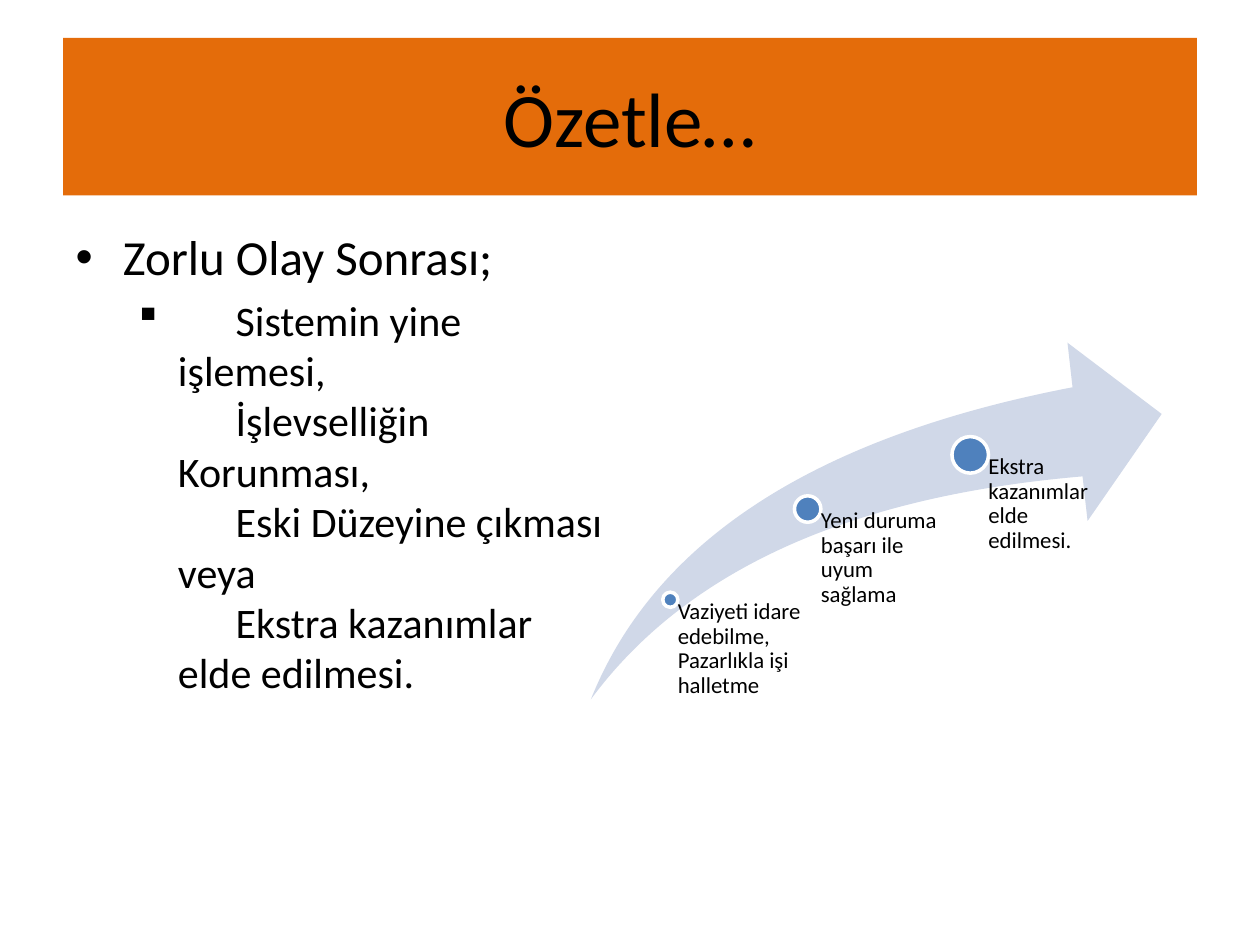
from pptx import Presentation, util as u
from pptx.dml.color import RGBColor
from pptx.enum import shapes, text
from pptx.oxml import parse_xml
from pptx.oxml.ns import nsdecls

HUES = {"band": "E46C0A", "ink": "000000", "swoosh": "D0D8E8",
        "dot": "4F81BD", "rim": "FFFFFF"}
KINDS = shapes.MSO_SHAPE


class Deck:
    """Style and current slide; one grid unit is a tenth of an inch."""

    def __init__(self, wide=100, high=75):
        self.prs = Presentation()
        self.prs.slide_width = self.unit(wide)
        self.prs.slide_height = self.unit(high)
        self.slide = self.prs.slides.add_slide(self.prs.slide_layouts[1])

    def unit(self, n):
        return u.Inches(n / 10)

    def paint(self, fill, hue):
        fill.solid()
        fill.fore_color.rgb = RGBColor.from_string(HUES[hue])

    def place(self, item, *box):
        item.left, item.top, item.width, item.height = map(self.unit, box)

    def label(self, para, words, size):
        para.text = words
        para.font.name = "Calibri"
        para.font.size = u.Pt(size)
        para.font.color.rgb = RGBColor.from_string(HUES["ink"])

    def title(self, words, *box):
        head = self.slide.shapes.title
        self.place(head, *box)
        self.paint(head.fill, "band")
        self.label(head.text_frame.paragraphs[0], words, 44)

    def body(self, lead, lines, *box):
        hold = self.slide.placeholders[1]
        self.place(hold, *box)
        frame = hold.text_frame
        self.label(frame.paragraphs[0], lead, 28)
        para = frame.add_paragraph()
        para.level = 1
        # Square bullet, and a tab stop that sets in each line's start
        props = para._p.get_or_add_pPr()
        for tag in ('<a:buFont {} typeface="Wingdings"/>',
                    '<a:buChar {} char="§"/>',
                    f'<a:tabLst {{}}><a:tab pos="{u.Inches(1.27)}" algn="l"/></a:tabLst>'):
            props.append(parse_xml(tag.format(nsdecls("a"))))
        self.label(para, "\v".join("\t" + line for line in lines), 24)

    def shape(self, kind, hue, *box):
        item = self.slide.shapes.add_shape(kind, *map(self.unit, box))
        item.shadow.inherit = False
        self.paint(item.fill, hue)
        item.line.fill.background()
        return item

    def swoosh(self, *box):
        item = self.shape(KINDS.SWOOSH_ARROW, "swoosh", *box)
        item.adjustments[0] = item.adjustments[1] = 0.25

    def step(self, x, y, size, wide, base, words):
        """A dot centred on x, y with its label hung from the centre."""
        half = size / 2
        dot = self.shape(KINDS.OVAL, "dot", x - half, y - half, size, size)
        self.paint(dot.line.fill, "rim")
        dot.line.width = u.Pt(2)
        note = self.slide.shapes.add_textbox(
            *map(self.unit, (x, y, wide, base - y)))
        frame = note.text_frame
        frame.word_wrap = True
        frame.vertical_anchor = text.MSO_ANCHOR.TOP
        frame.margin_left = self.unit(half)
        frame.margin_top = frame.margin_right = frame.margin_bottom = 0
        para = frame.paragraphs[0]
        para.line_spacing = 0.9
        self.label(para, words, 13)


def main():
    deck = Deck()

    # Title band and list
    deck.title("Özetle…", 5, 3, 90, 12.5)
    deck.body("Zorlu Olay Sonrası;",
              ["Sistemin yine işlemesi, ", "İşlevselliğin Korunması, ",
               "Eski Düzeyine çıkması veya ",
               "Ekstra kazanımlar elde edilmesi."],
              5, 17.5, 44.2, 49.5)

    # Rising arrow with its three steps
    deck.swoosh(46.9, 27.2, 45.3, 28.3)
    for x, y, size, wide, words in (
            (53.2, 47.6, 1.2, 10.6,
             "Vaziyeti idare edebilme, Pazarlıkla işi halletme"),
            (64.1, 40.4, 2.1, 10.9, "Yeni duruma başarı ile uyum sağlama"),
            (77, 36.1, 2.9, 10.9, "Ekstra kazanımlar elde edilmesi.")):
        deck.step(x, y, size, wide, 55.8, words)

    deck.prs.save("out.pptx")


if __name__ == "__main__":
    main()
